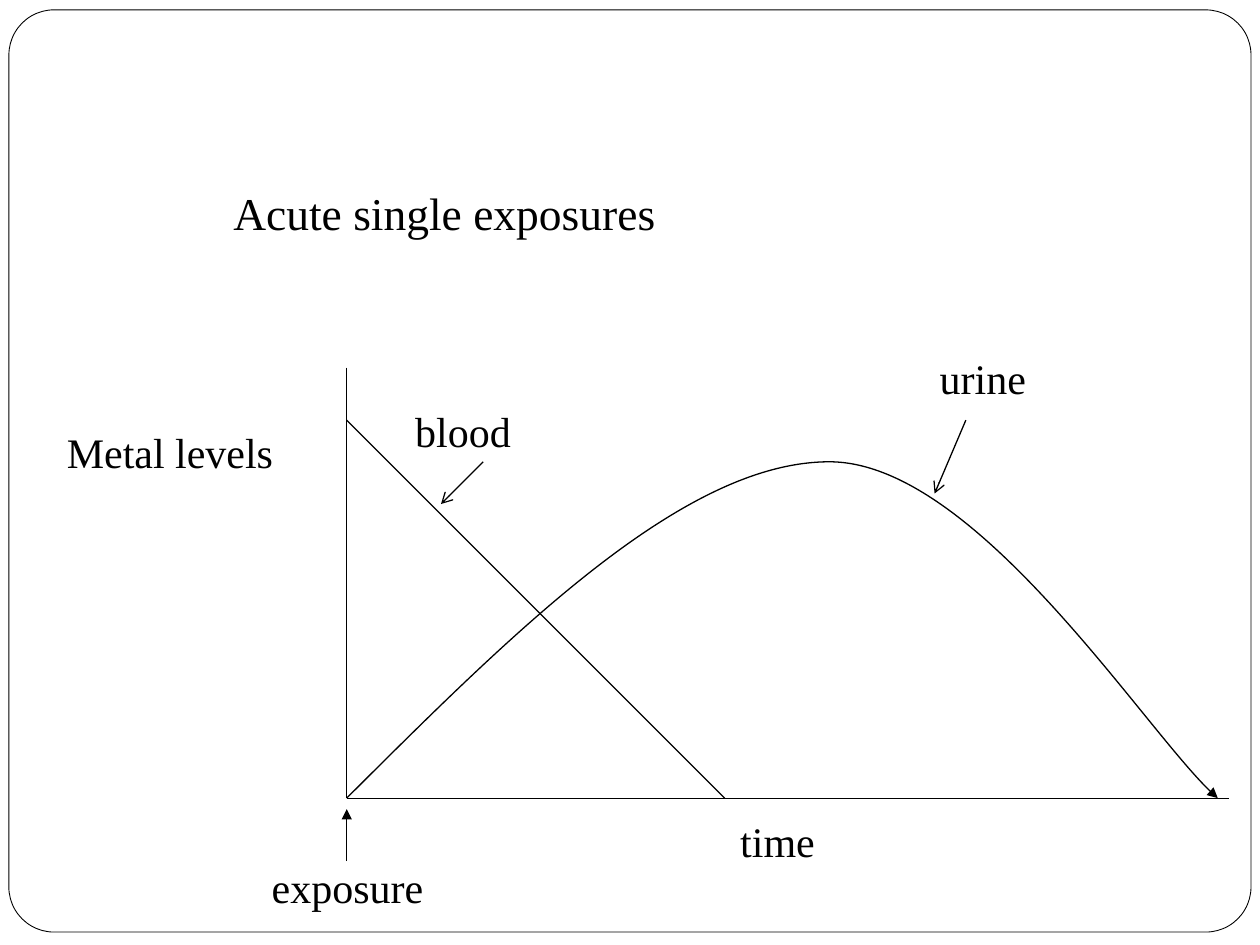
from dataclasses import dataclass

from lxml import etree
from pptx import Presentation
from pptx.dml.color import RGBColor
from pptx.enum.shapes import MSO_CONNECTOR, MSO_SHAPE
from pptx.enum.text import MSO_ANCHOR, MSO_AUTO_SIZE, PP_ALIGN
from pptx.oxml.ns import qn
from pptx.util import Cm, Pt

STRAIGHT = MSO_CONNECTOR.STRAIGHT
ROUNDED = MSO_SHAPE.ROUNDED_RECTANGLE
TOP = MSO_ANCHOR.TOP
LEFT, CENTER = PP_ALIGN.LEFT, PP_ALIGN.CENTER
NO_FIT, GROW = MSO_AUTO_SIZE.NONE, MSO_AUTO_SIZE.SHAPE_TO_FIT_TEXT


@dataclass(frozen=True)
class Theme:
    ink: RGBColor = RGBColor(0x00, 0x00, 0x00)
    paper: RGBColor = RGBColor(0xFF, 0xFF, 0xFF)
    font: str = "Times New Roman"
    title_size: float = 26
    label_size: float = 24
    frame_line: float = 0.5
    graph_line: float = 0.75


theme = Theme()


def write(frame, text, size=theme.label_size, align=CENTER, wrap=False,
          fit=GROW, space_before=0):
    frame.word_wrap = wrap
    frame.auto_size = fit
    frame.vertical_anchor = TOP
    paragraph = frame.paragraphs[0]
    paragraph.alignment = align
    paragraph.space_before = Pt(space_before)
    run = paragraph.add_run()
    run.text = text
    run.font.name = theme.font
    run.font.size = Pt(size)
    run.font.color.rgb = theme.ink


def draw_line(shape, width=theme.graph_line, arrowhead=None):
    shape.line.color.rgb = theme.ink
    shape.line.width = Pt(width)
    properties = shape.element.find(qn("p:spPr"))
    if properties.find(qn("a:effectLst")) is None:
        etree.SubElement(properties, qn("a:effectLst"))
    if arrowhead:
        outline = properties.find(qn("a:ln"))
        etree.SubElement(outline, qn("a:tailEnd"), type=arrowhead)


presentation = Presentation()
presentation.slide_width = Cm(25.4)
presentation.slide_height = Cm(19.05)
slide = presentation.slides.add_slide(presentation.slide_layouts[5])
shapes = slide.shapes
title = shapes.title

# Rounded frame, behind everything else
frame = shapes.add_shape(ROUNDED, Cm(0.18), Cm(0.2), Cm(25.04), Cm(18.59))
frame.adjustments[0] = 0.049
frame.fill.solid()
frame.fill.fore_color.rgb = theme.paper
frame.shadow.inherit = False
draw_line(frame, width=theme.frame_line)
title.element.addprevious(frame.element)

# Title
title.left, title.top = Cm(4.45), Cm(3.61)
title.width, title.height = Cm(20.5), Cm(2.5)
write(title.text_frame, "Acute single exposures", size=theme.title_size,
      align=LEFT, wrap=True, fit=NO_FIT, space_before=5.8)

# Axes, blood level and pointers
origin_x, origin_y = 6.99, 16.09
for x1, y1, x2, y2, arrowhead in (
    (origin_x, 7.41, origin_x, origin_y, None),       # level axis
    (origin_x, origin_y, 24.77, origin_y, None),      # time axis
    (origin_x, 8.47, 14.61, origin_y, None),          # blood level
    (origin_x, 17.36, origin_x, 16.31, "triangle"),   # moment of exposure
    (9.74, 9.31, 8.89, 10.16, "arrow"),               # blood pointer
    (19.47, 8.47, 18.84, 9.95, "arrow"),              # urine pointer
):
    line = shapes.add_connector(STRAIGHT, Cm(x1), Cm(y1), Cm(x2), Cm(y2))
    draw_line(line, arrowhead=arrowhead)

# Urine level: two Bezier segments of three points each
urine_points = [(10.39, 12.7), (13.79, 9.31), (16.72, 9.31),
                (19.66, 9.31), (23.24, 14.99), (24.55, origin_y)]
builder = shapes.build_freeform(Cm(origin_x), Cm(origin_y))
builder.add_line_segments([(Cm(x), Cm(y)) for x, y in urine_points], close=False)
urine_curve = builder.convert_to_shape()
urine_curve.fill.background()
urine_curve.shadow.inherit = False
draw_line(urine_curve, arrowhead="triangle")
segments = list(urine_curve.element.iter(qn("a:lnTo")))
for start in range(0, len(segments), 3):
    bezier = etree.Element(qn("a:cubicBezTo"))
    segments[start].addprevious(bezier)
    for segment in segments[start:start + 3]:
        bezier.append(segment[0])
        segment.getparent().remove(segment)

# Labels
for text, left, top, width in (
    ("blood", 8.05, 8.05, 2.57),
    ("urine", 18.62, 6.99, 2.39),
    ("time", 14.61, 16.31, 2.13),
    ("Metal levels", 0.99, 8.47, 4.88),
    ("exposure", 5.05, 17.25, 3.91),
):
    label = shapes.add_textbox(Cm(left), Cm(top), Cm(width), Cm(1.27))
    write(label.text_frame, text)

presentation.save("out.pptx")
